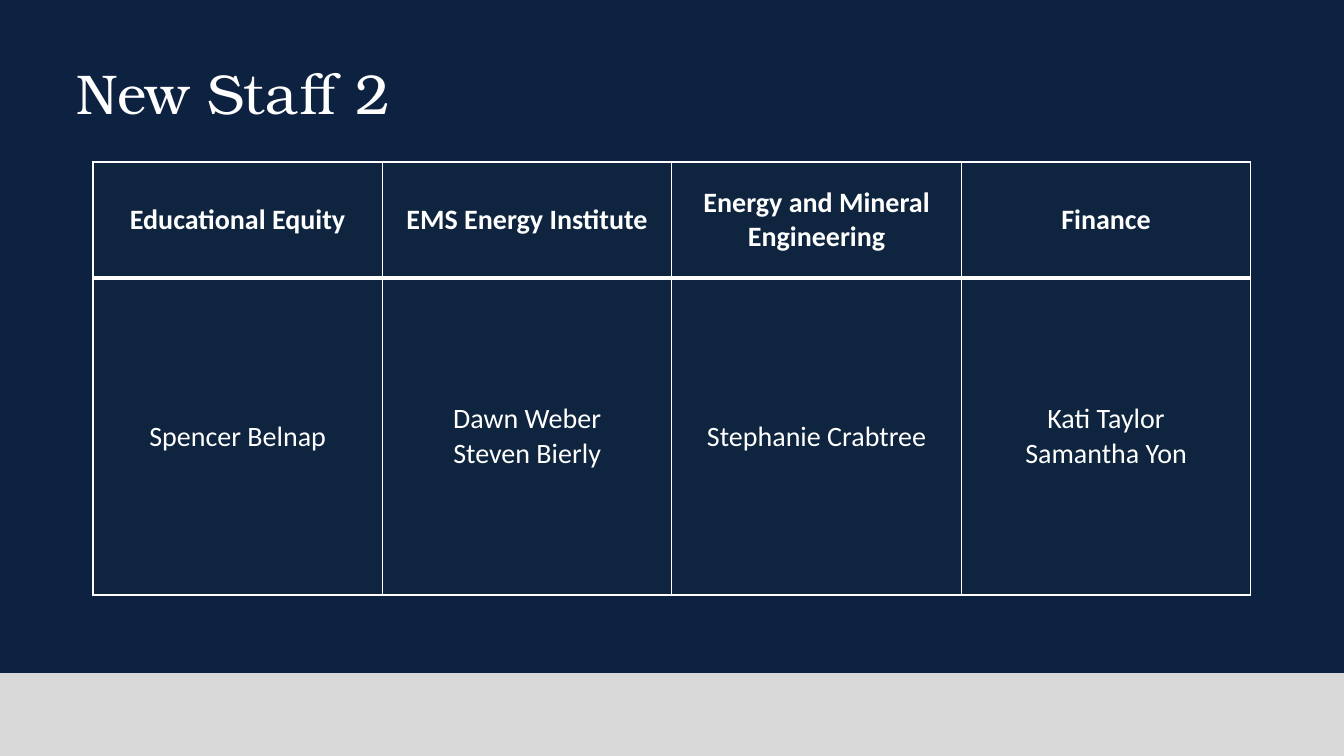
import lxml.etree
import pptx
import pptx.dml.color
import pptx.enum.shapes
import pptx.enum.text
import pptx.oxml.ns
import pptx.util

SLIDE_W, SLIDE_H = 1344, 756
EMU_PER_PX = 12192000 / SLIDE_W
COLORS = {"navy": "0D2241", "cell": "0F243E", "footer": "D9D9D9", "white": "FFFFFF"}
STAFF = {
    "Educational Equity": ["Spencer Belnap"],
    "EMS Energy Institute": ["Dawn Weber", "Steven Bierly"],
    "Energy and Mineral Engineering": ["Stephanie Crabtree"],
    "Finance": ["Kati Taylor", "Samantha Yon"],
}
ROW_HEIGHTS = [116, 317]
THIN, THICK = 1, 3


def px(*lengths):
    return [pptx.util.Emu(round(length * EMU_PER_PX)) for length in lengths]


def rgb(name):
    return pptx.dml.color.RGBColor.from_string(COLORS[name])


prs = pptx.Presentation()
prs.slide_width, prs.slide_height = px(SLIDE_W, SLIDE_H)
slide = prs.slides.add_slide(prs.slide_layouts[6])

# Background bands
for top, height, color in [(0, 675, "navy"), (673, 83, "footer")]:
    band = slide.shapes.add_shape(
        pptx.enum.shapes.MSO_SHAPE.RECTANGLE, *px(0, top, SLIDE_W, height))
    band.shadow.inherit = False
    band.fill.solid()
    band.fill.fore_color.rgb = rgb(color)
    band.line.fill.background()

# Title
title = slide.shapes.add_textbox(*px(67, 36, 1210, 112)).text_frame
title.word_wrap = True
title.vertical_anchor = pptx.enum.text.MSO_ANCHOR.MIDDLE
title.text = "New Staff 2"
title_font = title.paragraphs[0].runs[0].font
title_font.name = "TeX Gyre Bonum"
title_font.size = pptx.util.Pt(40)
title_font.color.rgb = rgb("white")

# Staff by department
staff_table = slide.shapes.add_table(
    2, len(STAFF), *px(93, 162, 1158, sum(ROW_HEIGHTS))).table
for row, height in zip(staff_table.rows, px(*ROW_HEIGHTS)):
    row.height = height

for col, (department, names) in enumerate(STAFF.items()):
    for row, lines in enumerate([[department], names]):
        is_header = row == 0
        cell = staff_table.cell(row, col)
        cell.text = "\n".join(lines)
        cell.vertical_anchor = pptx.enum.text.MSO_ANCHOR.MIDDLE
        cell.margin_left, cell.margin_right = px(11, 11)
        cell.margin_top, cell.margin_bottom = px(6, 6)

        borders = {
            "lnL": THIN,
            "lnR": THIN,
            "lnT": THIN if is_header else THICK,
            "lnB": THICK if is_header else THIN,
        }
        cell_properties = cell._tc.get_or_add_tcPr()
        for side, points in borders.items():
            border = lxml.etree.SubElement(
                cell_properties, pptx.oxml.ns.qn(f"a:{side}"), w=str(pptx.util.Pt(points)))
            border_fill = lxml.etree.SubElement(border, pptx.oxml.ns.qn("a:solidFill"))
            lxml.etree.SubElement(
                border_fill, pptx.oxml.ns.qn("a:srgbClr"), val=COLORS["white"])
        cell.fill.solid()
        cell.fill.fore_color.rgb = rgb("cell")

        for paragraph in cell.text_frame.paragraphs:
            paragraph.alignment = pptx.enum.text.PP_ALIGN.CENTER
            font = paragraph.runs[0].font
            font.name = "Calibri"
            font.size = pptx.util.Pt(20)
            font.bold = is_header
            font.color.rgb = rgb("white")

prs.save("out.pptx")
